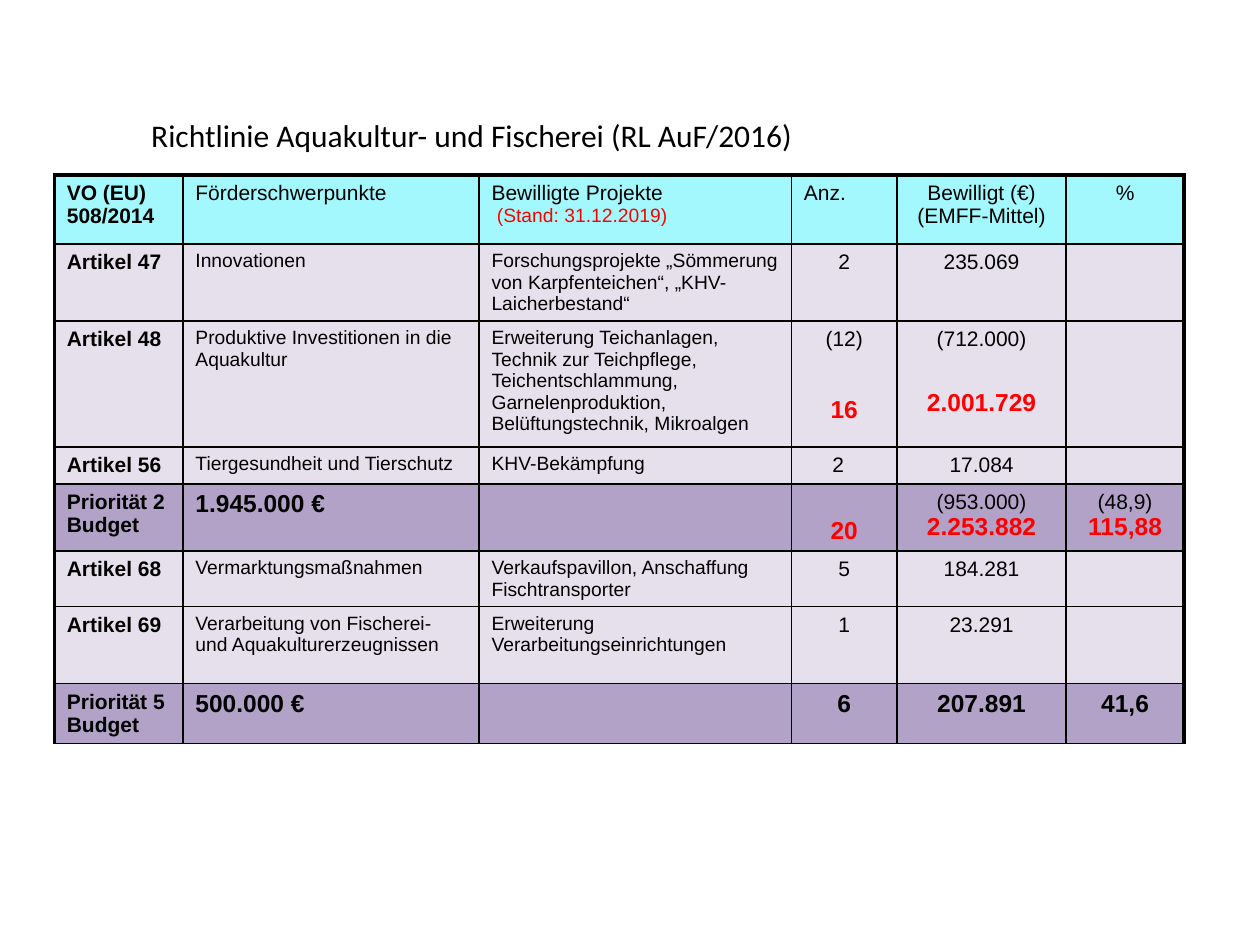
from dataclasses import dataclass

from lxml import etree
from pptx import Presentation
from pptx.dml.color import RGBColor
from pptx.enum.text import MSO_ANCHOR, PP_ALIGN
from pptx.oxml.ns import qn
from pptx.util import Pt

LEFT, CENTER = PP_ALIGN.LEFT, PP_ALIGN.CENTER
TOP, BOTTOM = MSO_ANCHOR.TOP, MSO_ANCHOR.BOTTOM
BLACK, RED = "000000", "FF0000"


@dataclass(frozen=True)
class Style:
    size: int
    bold: bool = False
    color: str = BLACK


class Theme:
    title_font, table_font = "Calibri", "Arial"
    title = Style(18)
    plain, key, body = Style(12), Style(12, True), Style(11)
    note, total, hot = Style(11, color=RED), Style(14, True), Style(14, True, RED)
    fills = {"head": "A2F8FC", "item": "E6E0EC", "sum": "B3A2C7"}
    thin, thick = 1, 2.25


@dataclass(frozen=True)
class Line:
    text: str
    style: Style
    gap: float = 0


@dataclass(frozen=True)
class Entry:
    lines: tuple
    anchor: int = TOP
    right: float = 7.2


COLS = [73.5, 169.2, 178.5, 60.5, 96.5, 67.5]
ROWS = [
    ("head", 39.5, [
        "VO (EU) 508/2014",
        "Förderschwerpunkte",
        Entry((Line("Bewilligte Projekte", Theme.plain),
               Line(" (Stand: 31.12.2019)", Theme.note))),
        "Anz.", "Bewilligt (€) (EMFF-Mittel)", "%"]),
    ("item", 44, [
        "Artikel 47", "Innovationen",
        "Forschungsprojekte „Sömmerung von Karpfenteichen“, „KHV- Laicherbestand“",
        "2", "235.069", ""]),
    ("item", 72, [
        "Artikel 48", "Produktive Investitionen in die Aquakultur",
        "Erweiterung Teichanlagen, Technik zur Teichpflege, Teichentschlammung, "
        "Garnelenproduktion, Belüftungstechnik, Mikroalgen",
        Entry((Line("(12)", Theme.plain), Line("16", Theme.hot, 26))),
        Entry((Line("(712.000)", Theme.plain), Line("2.001.729", Theme.hot, 22))),
        ""]),
    ("item", 21, [
        "Artikel 56", "Tiergesundheit und Tierschutz", "KHV-Bekämpfung",
        Entry((Line("2", Theme.plain),), right=14), "17.084", ""]),
    ("sum", 38.5, [
        Entry((Line("Priorität 2", Theme.key), Line("Budget", Theme.key))),
        "1.945.000 €", "",
        Entry((Line("20", Theme.hot),), BOTTOM),
        Entry((Line("(953.000)", Theme.plain), Line("2.253.882", Theme.hot))),
        Entry((Line("(48,9)", Theme.plain), Line("115,88", Theme.hot)))]),
    ("item", 31.5, [
        "Artikel 68", "Vermarktungsmaßnahmen",
        "Verkaufspavillon, Anschaffung Fischtransporter", "5", "184.281", ""]),
    ("item", 44, [
        "Artikel 69", "Verarbeitung von Fischerei- und Aquakulturerzeugnissen",
        "Erweiterung Verarbeitungseinrichtungen", "1", "23.291", ""]),
    ("sum", 34, [
        Entry((Line("Priorität 5", Theme.key), Line("Budget", Theme.key))),
        "500.000 €", "", "6", "207.891", "41,6"]),
]


def choose(kind, col):
    if col == 0:
        return Theme.key
    if kind == "sum":
        return Theme.total
    return Theme.body if kind == "item" and col < 3 else Theme.plain


class Deck:
    def __init__(self, theme):
        self.theme = theme
        self.prs = Presentation()
        self.prs.slide_width, self.prs.slide_height = Pt(720), Pt(540)
        self.slide = self.prs.slides.add_slide(self.prs.slide_layouts[5])

    def label(self, para, line, font, align):
        para.text = line.text
        para.alignment = align
        if line.gap:
            para.space_before = Pt(line.gap)
        para.font.name = font
        para.font.size = Pt(line.style.size)
        para.font.bold = line.style.bold
        para.font.color.rgb = RGBColor.from_string(line.style.color)

    def title(self, text, left, top, width, height):
        shape = self.slide.shapes.title
        shape.left, shape.top = Pt(left), Pt(top)
        shape.width, shape.height = Pt(width), Pt(height)
        frame = shape.text_frame
        frame.vertical_anchor = TOP
        self.label(frame.paragraphs[0], Line(text, self.theme.title),
                   self.theme.title_font, LEFT)

    def border(self, cell, sides):
        props = cell._tc.get_or_add_tcPr()
        for side, width in sides.items():
            edge = etree.SubElement(props, qn(f"a:ln{side}"), w=str(Pt(width)))
            fill = etree.SubElement(edge, qn("a:solidFill"))
            etree.SubElement(fill, qn("a:srgbClr"), val=BLACK)

    def cell(self, cell, entry, fill, align, sides):
        self.border(cell, sides)
        cell.fill.solid()
        cell.fill.fore_color.rgb = RGBColor.from_string(fill)
        cell.margin_left, cell.margin_right = Pt(7.2), Pt(entry.right)
        cell.margin_top = cell.margin_bottom = Pt(3.6)
        cell.vertical_anchor = entry.anchor
        frame = cell.text_frame
        for i, line in enumerate(entry.lines):
            para = frame.add_paragraph() if i else frame.paragraphs[0]
            self.label(para, line, self.theme.table_font, align)
            if not line.text:
                etree.SubElement(para._p, qn("a:endParaRPr"),
                                 sz=str(line.style.size * 100))

    def table(self, left, top, cols, rows):
        look = self.theme
        high = sum(row[1] for row in rows)
        grid = self.slide.shapes.add_table(
            len(rows), len(cols), Pt(left), Pt(top), Pt(sum(cols)), Pt(high)).table
        for col, width in zip(grid.columns, cols):
            col.width = Pt(width)
        for r, (kind, height, items) in enumerate(rows):
            grid.rows[r].height = Pt(height)
            for c, item in enumerate(items):
                if isinstance(item, str):
                    style = choose(kind, c) if item else look.body
                    item = Entry((Line(item, style),))
                sides = {
                    "L": look.thin if c else look.thick,
                    "R": look.thick if c == len(cols) - 1 else look.thin,
                    "T": look.thin if r else look.thick,
                    "B": look.thin,
                }
                first = 4 if kind == "head" else 3
                align = CENTER if c >= first else LEFT
                self.cell(grid.cell(r, c), item, look.fills[kind], align, sides)

    def save(self):
        self.prs.save("out.pptx")


def main():
    deck = Deck(Theme())
    deck.title("Richtlinie Aquakultur- und Fischerei (RL AuF/2016)",
               79.2, 62.64, 402.5, 29)
    deck.table(31, 100, COLS, ROWS)
    deck.save()


if __name__ == "__main__":
    main()
